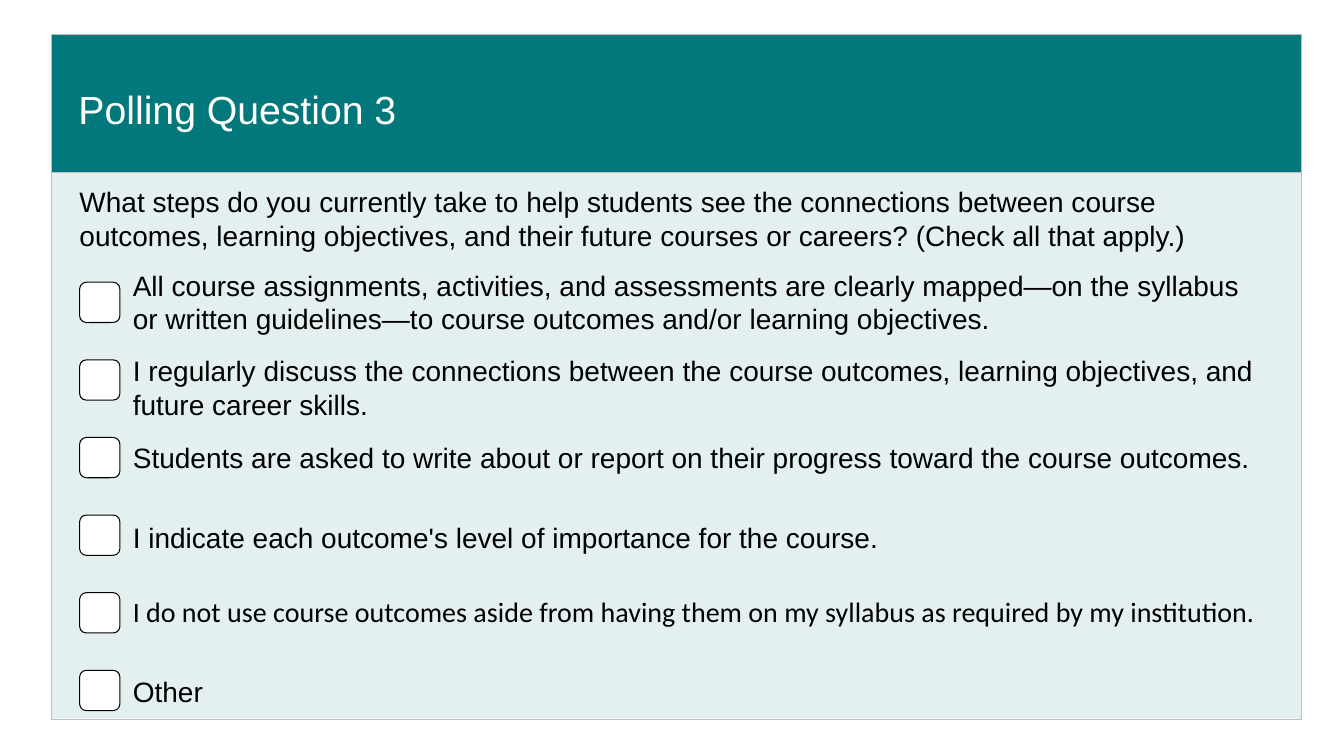
"""Builds the polling question slide with six checkbox answers."""
from pptx import Presentation
from pptx.dml.color import RGBColor
from pptx.enum.shapes import MSO_SHAPE as Shape
from pptx.util import Pt

COLORS = {
    "teal": "03787C",
    "mist": "E4F0F0",
    "border": "BFBFBF",
    "white": "FFFFFF",
    "black": "000000",
}

deck = Presentation()
deck.slide_width, deck.slide_height = Pt(960), Pt(540)
slide = deck.slides.add_slide(deck.slide_layouts[6])


def add_box(kind, left, top, width, height, fill, line, weight):
    box = slide.shapes.add_shape(kind, Pt(left), Pt(top), Pt(width), Pt(height))
    box.shadow.inherit = False
    box.fill.solid()
    box.fill.fore_color.rgb = RGBColor.from_string(COLORS[fill])
    box.line.color.rgb = RGBColor.from_string(COLORS[line])
    box.line.width = Pt(weight)


def add_text(words, left, top, width, height, size=20, font="Arial", color="black"):
    frame = slide.shapes.add_textbox(Pt(left), Pt(top), Pt(width), Pt(height)).text_frame
    frame.word_wrap = True
    frame.text = words
    style = frame.paragraphs[0].runs[0].font
    style.size = Pt(size)
    style.name = font
    style.color.rgb = RGBColor.from_string(COLORS[color])


add_box(Shape.RECTANGLE, 36.7, 118.1, 892.8, 395.3, "mist", "border", 0.25)
add_text(
    "What steps do you currently take to help students see the connections between course "
    "outcomes, learning objectives, and their future courses or careers? (Check all that apply.)",
    49.7, 128.2, 873.4, 55.4,
)

answers = [
    ("All course assignments, activities, and assessments are clearly mapped—on the syllabus "
     "or written guidelines—to course outcomes and/or learning objectives.",
     187.9, 818.6, 55.4, "Arial"),
    ("I regularly discuss the connections between the course outcomes, learning objectives, and "
     "future career skills.", 249.1, 830.9, 55.4, "Arial"),
    ("Students are asked to write about or report on their progress toward the course outcomes.",
     311, 841.7, 31.7, "Arial"),
    ("I indicate each outcome's level of importance for the course.", 367.9, 781.9, 31.7, "Arial"),
    ("I do not use course outcomes aside from having them on my syllabus as required by my "
     "institution.", 421.2, 830.9, 31.7, "Calibri"),
    ("Other", 478.1, 171.4, 31.7, "Arial"),
]
for row, (answer, top, width, height, font) in enumerate(answers):
    add_box(Shape.ROUNDED_RECTANGLE, 56.9, 201.6 + 55.44 * row, 28.8, 28.8, "white", "black", 0.75)
    add_text(answer, 87.8, top, width, height, font=font)

add_box(Shape.RECTANGLE, 36.7, 24.5, 892.8, 98.6, "teal", "border", 0.25)
add_text("Polling Question 3", 49, 57.6, 309.6, 41, size=28, color="white")

deck.save("out.pptx")
